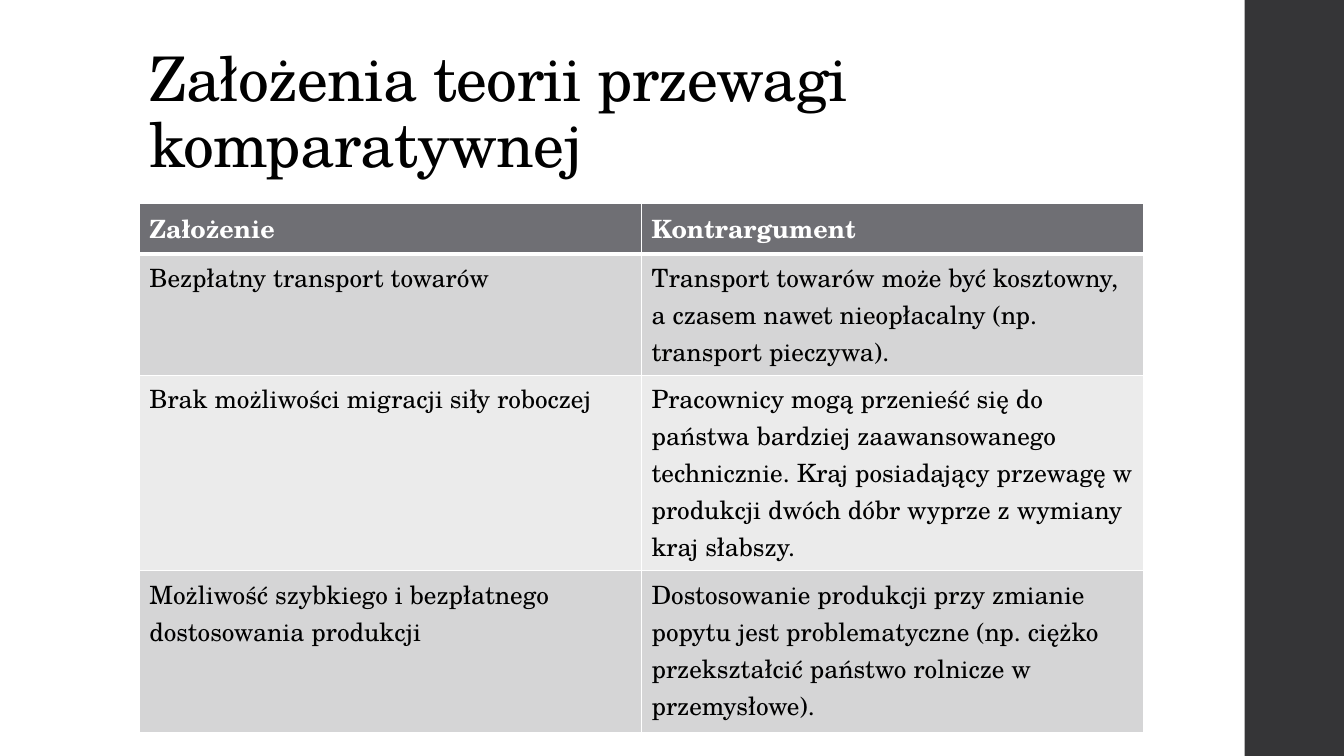
from lxml.etree import SubElement
from pptx import Presentation
from pptx.dml.color import RGBColor
from pptx.enum.shapes import MSO_SHAPE as Shape
from pptx.enum.text import MSO_ANCHOR as Anchor
from pptx.oxml.ns import qn
from pptx.util import Pt

FONT = "TeX Gyre Schola"
WIDTH, HEIGHT = 960, 540
BLACK, WHITE = "000000", "FFFFFF"
SIDEBAR_FILL, HEADER_FILL = "353537", "6F6F74"
BAND_FILLS = ("D5D5D6", "EBEBEB")

TITLE = "Założenia teorii przewagi komparatywnej"
ROWS = [
    ("Założenie", "Kontrargument"),
    ("Bezpłatny transport towarów",
     "Transport towarów może być kosztowny, a czasem nawet nieopłacalny "
     "(np. transport pieczywa)."),
    ("Brak możliwości migracji siły roboczej",
     "Pracownicy mogą przenieść się do państwa bardziej zaawansowanego "
     "technicznie. Kraj posiadający przewagę w produkcji dwóch dóbr wyprze "
     "z wymiany kraj słabszy."),
    ("Możliwość szybkiego i bezpłatnego dostosowania produkcji",
     "Dostosowanie produkcji przy zmianie popytu jest problematyczne "
     "(np. ciężko przekształcić państwo rolnicze w przemysłowe)."),
]
ROW_HEIGHTS = (36, 86.5, 139.5, 115.5)


def color(value):
    return RGBColor.from_string(value)


def format_text(text_frame, size, text_color, line_spacing, bold=False):
    for paragraph in text_frame.paragraphs:
        paragraph.line_spacing = line_spacing
        for run in paragraph.runs:
            run.font.name = FONT
            run.font.size = Pt(size)
            run.font.bold = bold
            run.font.color.rgb = color(text_color)


def set_borders(cell, widths):
    """Draw white cell borders; widths maps L, R, T and B to points."""
    properties = cell._tc.get_or_add_tcPr()
    for side, width in widths.items():
        line = SubElement(properties, qn(f"a:ln{side}"), w=str(Pt(width)))
        fill = SubElement(line, qn("a:solidFill"))
        SubElement(fill, qn("a:srgbClr"), val=WHITE)


def add_sidebar(slide, left, top, width, height):
    sidebar = slide.shapes.add_shape(
        Shape.RECTANGLE, Pt(left), Pt(top), Pt(width), Pt(height))
    sidebar.shadow.inherit = False
    sidebar.fill.solid()
    sidebar.fill.fore_color.rgb = color(SIDEBAR_FILL)
    sidebar.line.fill.background()


def add_title(slide, left, top, width, height):
    title = slide.shapes.add_textbox(Pt(left), Pt(top), Pt(width), Pt(height))
    text_frame = title.text_frame
    text_frame.word_wrap = True
    text_frame.vertical_anchor = Anchor.BOTTOM
    text_frame.text = TITLE
    format_text(text_frame, 44, BLACK, 0.9)
    for run in text_frame.paragraphs[0].runs:
        run.font._element.set("spc", "-50")


def add_argument_table(slide, left, top, width):
    columns = len(ROWS[0])
    table = slide.shapes.add_table(
        len(ROWS), columns, Pt(left), Pt(top), Pt(width),
        Pt(sum(ROW_HEIGHTS))).table
    for column in table.columns:
        column.width = Pt(width / columns)
    for row_index, texts in enumerate(ROWS):
        table.rows[row_index].height = Pt(ROW_HEIGHTS[row_index])
        header = row_index == 0
        fill = HEADER_FILL if header else BAND_FILLS[(row_index - 1) % 2]
        borders = {"L": 1, "R": 1, "T": 3 if row_index == 1 else 1,
                   "B": 3 if header else 1}
        for column_index, text in enumerate(texts):
            cell = table.cell(row_index, column_index)
            set_borders(cell, borders)
            cell.fill.solid()
            cell.fill.fore_color.rgb = color(fill)
            cell.text_frame.text = text
            format_text(cell.text_frame, 18, WHITE if header else BLACK,
                        1.0, bold=header)


def main():
    presentation = Presentation()
    presentation.slide_width = Pt(WIDTH)
    presentation.slide_height = Pt(HEIGHT)
    slide = presentation.slides.add_slide(presentation.slide_layouts[6])
    add_sidebar(slide, 889, 0, WIDTH - 889, HEIGHT)
    add_title(slide, 99.5, 29, 763, 104)
    add_argument_table(slide, 99.5, 145.5, 717.5)
    presentation.save("out.pptx")


if __name__ == "__main__":
    main()
